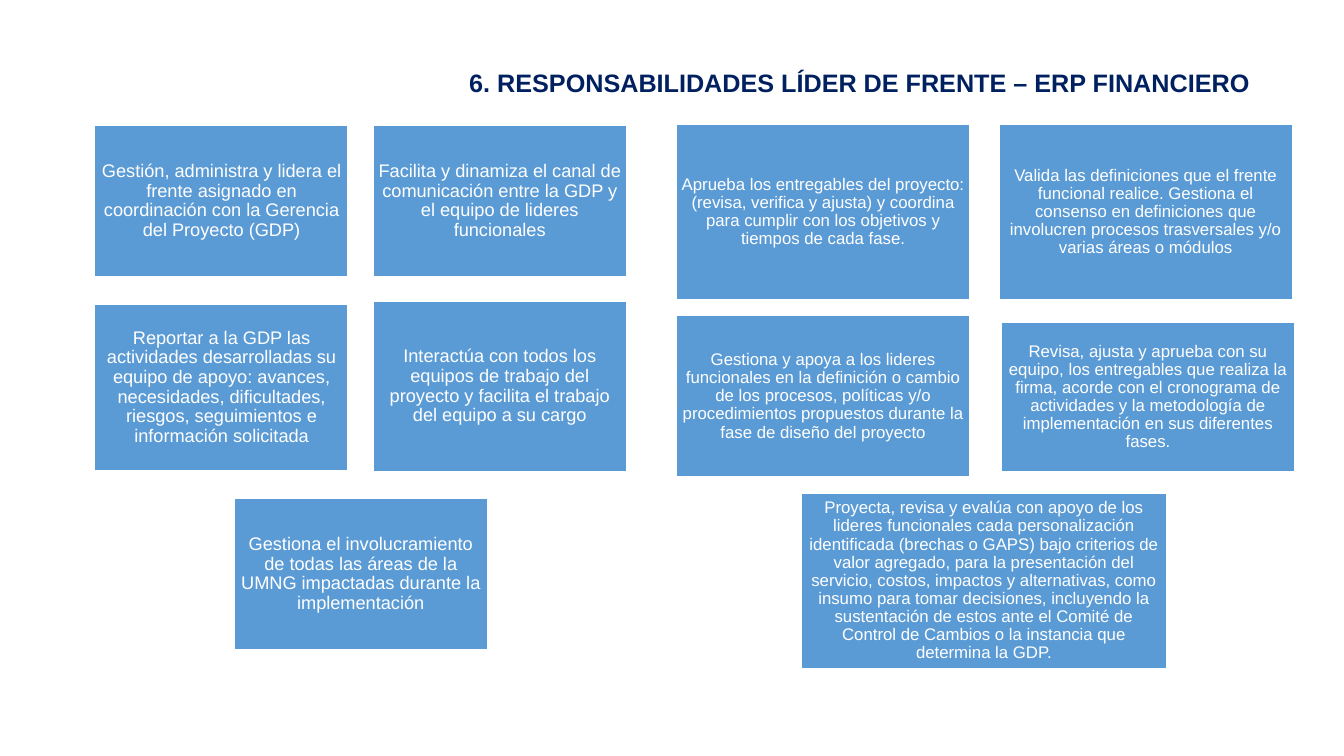
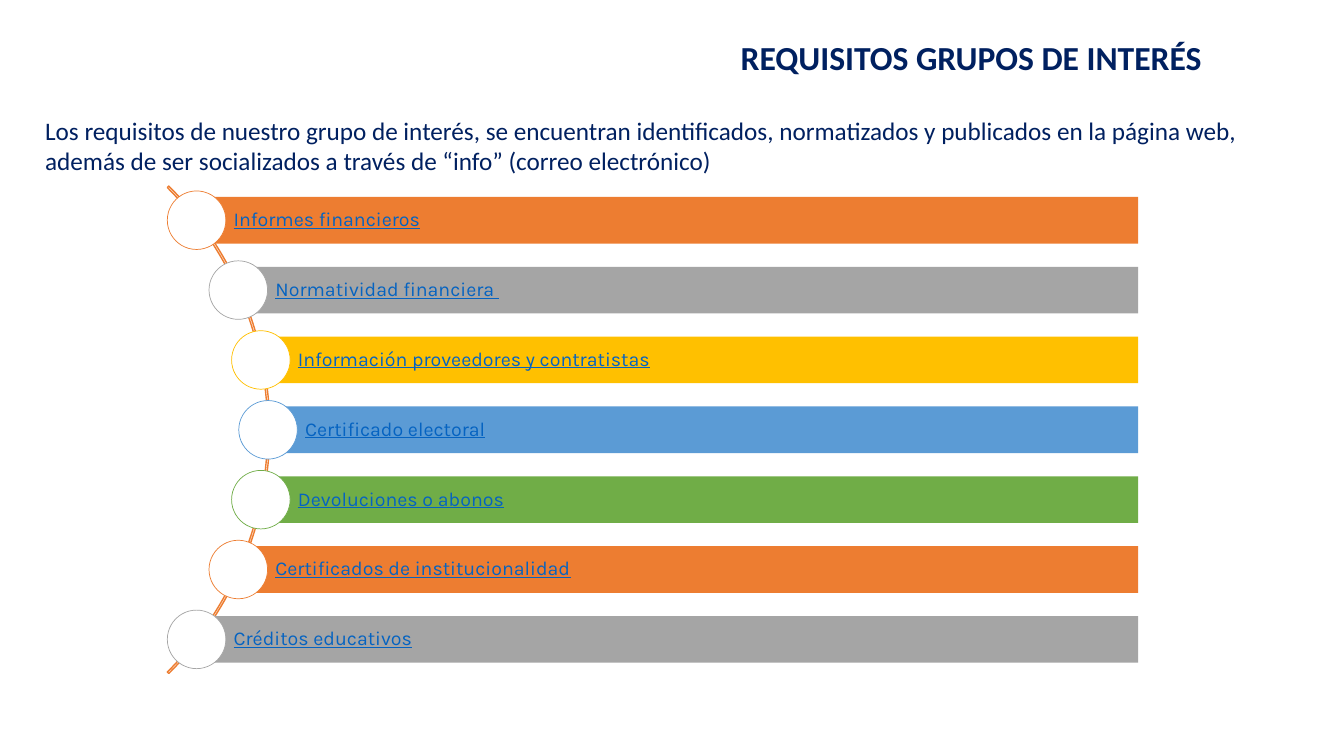
import math

import pptx
import pptx.dml.color
import pptx.enum.shapes
import pptx.enum.text
import pptx.util

Pt = pptx.util.Pt
SHAPES = pptx.enum.shapes.MSO_SHAPE
ALIGN = pptx.enum.text.PP_ALIGN
ANCHOR = pptx.enum.text.MSO_ANCHOR

COLOURS = {
    "navy": "002060",
    "white": "FFFFFF",
    "link": "0563C1",
    "blue": "5B9BD5",
    "orange": "ED7D31",
    "grey": "A5A5A5",
    "gold": "FFC000",
    "green": "70AD47",
}

# Cards: left, top, width, height inside their group, then the wording
TEAM_CARDS = [
    (0, 0, 181, 108.7, "Gestión, administra y lidera el frente asignado en coordinación "
     "con la Gerencia del Proyecto (GDP)"),
    (198.7, 0, 181, 108.7, "Facilita y dinamiza el canal de comunicación entre la GDP y el "
     "equipo de lideres funcionales"),
    (0, 128.3, 181, 118.5, "Reportar a la GDP las actividades desarrolladas su equipo de "
     "apoyo: avances, necesidades, dificultades, riesgos, seguimientos e información "
     "solicitada"),
    (198.7, 126, 181, 121.7, "Interactúa con todos los equipos de trabajo del proyecto y "
     "facilita el trabajo del equipo a su cargo"),
    (99.4, 266.4, 181, 108.7, "Gestiona el involucramiento de todas las áreas de la UMNG "
     "impactadas durante la implementación"),
]
PROJECT_CARDS = [
    (0, 0, 209.7, 125.5, "Aprueba los entregables del proyecto: (revisa, verifica y ajusta) "
     "y coordina para cumplir con los objetivos y tiempos de cada fase."),
    (230.4, 0, 209.7, 125.5, "Valida las definiciones que el frente funcional realice. "
     "Gestiona el consenso en definiciones que involucren procesos trasversales y/o varias "
     "áreas o módulos"),
    (0, 136.8, 209.7, 115.2, "Gestiona y apoya a los lideres funcionales en la definición o "
     "cambio de los procesos, políticas y/o procedimientos propuestos durante la fase de "
     "diseño del proyecto"),
    (232, 141.8, 209.7, 106.3, "Revisa, ajusta y aprueba con su equipo, los entregables que "
     "realiza la firma, acorde con el cronograma de actividades y la metodología de "
     "implementación en sus diferentes fases."),
    (89.3, 263.5, 260.8, 125.5, "Proyecta, revisa y evalúa con apoyo de los lideres "
     "funcionales cada personalización identificada (brechas o GAPS) bajo criterios de valor "
     "agregado, para la presentación del servicio, costos, impactos y alternativas, como "
     "insumo para tomar decisiones, incluyendo la sustentación de estos ante el Comité de "
     "Control de Cambios o la instancia que determina la GDP."),
]
REQUIREMENTS = [
    ("Informes financieros", "orange"),
    ("Normatividad financiera ", "grey"),
    ("Información proveedores y contratistas", "gold"),
    ("Certificado electoral", "blue"),
    ("Devoluciones o abonos", "green"),
    ("Certificados de institucionalidad", "orange"),
    ("Créditos educativos", "grey"),
]


def rgb(name):
    return pptx.dml.color.RGBColor.from_string(COLOURS[name])


def write(shape, text, font, size, colour, align=ALIGN.LEFT, bold=False, underline=False):
    para = shape.text_frame.paragraphs[0]
    para.alignment = align
    span = para.add_run()
    span.text = text
    span.font.name = font
    span.font.size = Pt(size)
    span.font.bold = bold
    span.font.underline = underline
    span.font.color.rgb = rgb(colour)
    return para


def add_text(page, box, text, font, size, wrap=True, **style):
    shape = page.shapes.add_textbox(*map(Pt, box))
    shape.text_frame.word_wrap = wrap
    write(shape, text, font, size, "navy", **style)


def add_title(page, box, text, font, size, **style):
    add_text(page, box, text, font, size, bold=True, **style)


def add_figure(page, kind, box, fill=None, line=None, weight=1):
    shape = page.shapes.add_shape(kind, *map(Pt, box))
    shape.shadow.inherit = False
    if fill:
        shape.fill.solid()
        shape.fill.fore_color.rgb = rgb(fill)
    else:
        shape.fill.background()
    if line:
        shape.line.color.rgb = rgb(line)
        shape.line.width = Pt(weight)
    else:
        shape.line.fill.background()
    return shape


def label(shape, text, font, size, colour, inset, left_inset, **style):
    frame = shape.text_frame
    frame.word_wrap = True
    frame.vertical_anchor = ANCHOR.MIDDLE
    frame.margin_top = frame.margin_right = frame.margin_bottom = Pt(inset)
    frame.margin_left = Pt(left_inset)
    write(shape, text, font, size, colour, **style).line_spacing = 0.9


def add_cards(page, left, top, cards, size):
    """Group of text cards, measured from the group's top left corner."""
    for x, y, width, height, text in cards:
        box = (left + x, top + y, width, height)
        card = add_figure(page, SHAPES.RECTANGLE, box, "blue", "white")
        label(card, text, "Arial", size, "white", 3.6, 3.6, align=ALIGN.CENTER)


def add_curved_list(page, box, items):
    """Bars whose left ends and circles follow an arc centred left of the box."""
    left, top, width, height = box
    bar_height, circle, radius = 33.3, 41.8, 245
    pitch = (height - circle) / (len(items) - 1)
    middle = top + height / 2
    centre = left + circle / 2 - math.sqrt(radius ** 2 - (middle - top - circle / 2) ** 2)

    # Thin arc behind the bars
    outer = radius + 1.2
    arc = add_figure(page, SHAPES.BLOCK_ARC,
                     (centre - outer, middle - outer, 2 * outer, 2 * outer), line="orange")
    for index, value in enumerate((189, 27, 0.003)):
        arc.adjustments[index] = value

    for index, (text, colour) in enumerate(items):
        y = top + circle / 2 + index * pitch
        x = centre + math.sqrt(radius ** 2 - (y - middle) ** 2)
        bar = add_figure(page, SHAPES.RECTANGLE,
                         (x, y - bar_height / 2, left + width - x, bar_height), colour)
        label(bar, text, "Karla", 14, "link", 2.9, 26.5, underline=True)
        add_figure(page, SHAPES.OVAL, (x - circle / 2, y - circle / 2, circle, circle),
                   "white", colour, 0.5)


def build_responsibilities(page):
    add_title(page, (18.7, 44.6, 881.3, 29), "6. RESPONSABILIDADES LÍDER DE FRENTE – ERP FINANCIERO",
              "Arial", 18, align=ALIGN.RIGHT)
    add_cards(page, 67.7, 89.2, TEAM_CARDS, 13)
    add_cards(page, 483.2, 88.7, PROJECT_CARDS, 12)


def build_requirements(page):
    add_title(page, (522, 23, 347.8, 36), "REQUISITOS GRUPOS DE INTERÉS", "Calibri", 24, wrap=False)
    add_text(page, (25.2, 78.5, 912.2, 51),
             "Los requisitos de nuestro grupo de interés, se encuentran identificados, "
             "normatizados y publicados en la página web, además de ser socializados a través "
             "de “info” (correo electrónico)", "Calibri", 18)
    add_curved_list(page, (119.5, 136.4, 693.5, 341.2), REQUIREMENTS)


def main():
    deck = pptx.Presentation()
    deck.slide_width, deck.slide_height = Pt(960), Pt(540)
    for build in (build_responsibilities, build_requirements):
        build(deck.slides.add_slide(deck.slide_layouts[6]))
    deck.save("out.pptx")


if __name__ == "__main__":
    main()
